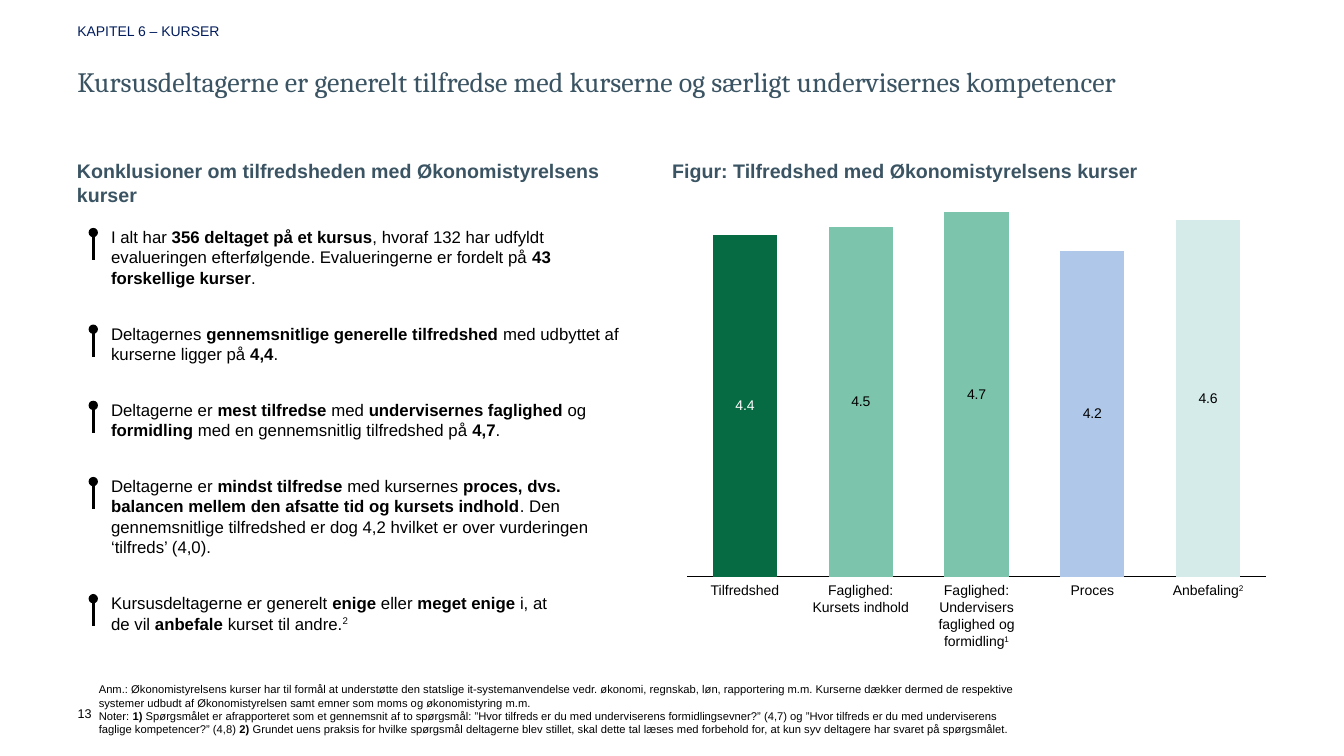
from lxml import etree
from pptx import Presentation
from pptx import util as u
from pptx.chart import data as chart_data
from pptx.dml import color
from pptx.enum import chart as charts, shapes, text
from pptx.oxml import parse_xml
from pptx.oxml import ns

BLACK, SLATE, NAVY = "000000", "3B5463", "031D5C"
LINE_HEIGHT, BULLET_GAP = 0.515, 0.89

CONCLUSIONS = [
    ("I alt har *356 deltaget på et kursus*, hvoraf 132 har udfyldt evalueringen efterfølgende. "
     "Evalueringerne er fordelt på *43 forskellige kurser*.", 3, 13),
    ("Deltagernes *gennemsnitlige generelle tilfredshed *med udbyttet af kurserne ligger på *4,4*.", 2, 13),
    ("Deltagerne er *mest tilfredse *med *undervisernes faglighed *og *formidling* "
     "med en gennemsnitlig tilfredshed på *4,7*.", 2, 13),
    ("Deltagerne er *mindst tilfredse *med kursernes *proces, dvs. balancen mellem den afsatte tid "
     "og kursets indhold*. Den gennemsnitlige tilfredshed er dog 4,2 hvilket er over vurderingen "
     "‘tilfreds’ (4,0).", 4, 12.4),
    ("Kursusdeltagerne er generelt* enige *eller* meget enige *i, at de vil *anbefale *kurset til andre.^2", 2, 11.53),
]

COURSES = [
    ("Tilfredshed", 4.4, "066B43", 1.78, 1),
    ("Faglighed: Kursets indhold", 4.5, "7CC4AC", 2.46, 2),
    ("Faglighed: Undervisers faglighed og formidling^1", 4.7, "7CC4AC", 1.93, 4),
    ("Proces", 4.2, "AFC8E9", 1.12, 1),
    ("Anbefaling^2", 4.6, "D4EBEA", 1.83, 1),
]

NOTES = (
    "Anm.: Økonomistyrelsens kurser har til formål at understøtte den statslige it-systemanvendelse vedr. "
    "økonomi, regnskab, løn, rapportering m.m. Kurserne dækker dermed de respektive systemer udbudt af "
    "Økonomistyrelsen samt emner som moms og økonomistyring m.m.\n"
    "Noter: *1) *Spørgsmålet er afrapporteret som et gennemsnit af to spørgsmål: ”Hvor tilfreds er du med "
    "underviserens formidlingsevner?” (4,7) og ”Hvor tilfreds er du med underviserens faglige kompetencer?” "
    "(4,8)* 2) *Grundet uens praksis for hvilke spørgsmål deltagerne blev stillet, skal dette tal læses med "
    "forbehold for, at kun syv deltagere har svaret på spørgsmålet."
)


def rgb(value):
    return color.RGBColor.from_string(value)


def style_font(font, size, value=BLACK, name="Arial"):
    font.size = u.Pt(size)
    font.name = name
    font.color.rgb = rgb(value)


def clear_margins(frame):
    frame.margin_left = frame.margin_right = frame.margin_top = frame.margin_bottom = 0


def write_rich(paragraph, content):
    for line_number, line in enumerate(content.split("\n")):
        if line_number:
            paragraph.add_line_break()
        for position, chunk in enumerate(line.split("*")):
            body, _, raised = chunk.partition("^")
            if body:
                run = paragraph.add_run()
                run.text = body
                if position % 2:
                    run.font.bold = True
            if raised:
                run = paragraph.add_run()
                run.text = raised
                run.font._element.set("baseline", "30000")


def add_text(slide, box, content, size, value=BLACK, bold=None, align=None, wrap=True):
    shape = slide.shapes.add_textbox(*map(u.Cm, box))
    frame = shape.text_frame
    clear_margins(frame)
    frame.word_wrap = wrap
    paragraph = frame.paragraphs[0]
    write_rich(paragraph, content)
    paragraph.alignment = align
    style_font(paragraph.font, size, value)
    paragraph.font.bold = bold
    return shape


def add_header(slide, left, top, width):
    chapter = add_text(slide, (left, top, 14.99, 0.71), "KAPITEL 6 – KURSER", 10, NAVY)
    chapter.text_frame.vertical_anchor = text.MSO_ANCHOR.MIDDLE
    title = slide.shapes.title
    title.left, title.top, title.width, title.height = map(u.Cm, (left, top + 1.3, width, 2))
    frame = title.text_frame
    frame.text = "Kursusdeltagerne er generelt tilfredse med kurserne og særligt undervisernes kompetencer"
    clear_margins(frame)
    frame.vertical_anchor = text.MSO_ANCHOR.TOP
    paragraph = frame.paragraphs[0]
    paragraph.alignment = text.PP_ALIGN.LEFT
    paragraph.line_spacing = 0.9
    style_font(paragraph.font, 20, SLATE, "Cambria")


def add_pin(slide, left, top):
    pin = slide.shapes.add_connector(
        shapes.MSO_CONNECTOR.STRAIGHT, u.Cm(left), u.Cm(top), u.Cm(left), u.Cm(top + 0.69))
    pin.line.color.rgb = rgb(BLACK)
    pin.line.width = u.Pt(2.25)
    etree.SubElement(pin.line._get_or_add_ln(), ns.qn("a:headEnd"), type="oval")
    etree.SubElement(pin._element.spPr, ns.qn("a:effectLst"))


def add_conclusions(slide, left, top, width):
    add_text(slide, (left, top, width, 1.19),
             "Konklusioner om tilfredsheden med Økonomistyrelsens kurser", 14, SLATE, True)
    bullet_top = top + 1.71
    for content, lines, bullet_width in CONCLUSIONS:
        height = lines * LINE_HEIGHT
        add_text(slide, (left + 0.86, bullet_top, bullet_width, height), content, 12)
        add_pin(slide, left + 0.41, bullet_top + 0.14)
        bullet_top += height + BULLET_GAP


def add_column_chart(slide, box):
    values = chart_data.CategoryChartData(number_format="0.0")
    values.categories = [str(number) for number in range(1, len(COURSES) + 1)]
    values.add_series("Series 1", [course[1] for course in COURSES])
    chart = slide.shapes.add_chart(
        charts.XL_CHART_TYPE.COLUMN_STACKED, *map(u.Cm, box), values).chart
    chart.has_legend = chart.has_title = False
    style_font(chart.font, 10)
    category_axis, value_axis = chart.category_axis, chart.value_axis
    category_axis.tick_label_position = charts.XL_TICK_LABEL_POSITION.NONE
    category_axis.major_tick_mark = charts.XL_TICK_MARK.NONE
    category_axis.format.line.color.rgb = rgb(BLACK)
    category_axis.format.line.width = u.Pt(0.75)
    value_axis.visible = value_axis.has_major_gridlines = False
    value_axis.minimum_scale = 0
    value_axis.maximum_scale = max(course[1] for course in COURSES)
    plot = chart.plots[0]
    plot.gap_width, plot.overlap = 80, 100
    plot.vary_by_categories = False
    plot.has_data_labels = True
    labels = plot.data_labels
    labels.show_value = True
    labels.number_format, labels.number_format_is_linked = "0.0", False
    labels.position = charts.XL_LABEL_POSITION.CENTER
    style_font(labels.font, 10)
    series = plot.series[0]
    series.format.fill.solid()
    series.format.fill.fore_color.rgb = rgb("7CC4AC")
    for index, course in enumerate(COURSES):
        fill = series.points[index].format.fill
        fill.solid()
        fill.fore_color.rgb = rgb(course[2])
        style_font(series.points[index].data_label.font, 10, BLACK if index else "FFFFFF")
    plot_area = chart._chartSpace.chart.plotArea
    for layout in plot_area.findall(ns.qn("c:layout")):
        plot_area.remove(layout)
    plot_area.insert(0, parse_xml(
        f'<c:layout {ns.nsdecls("c")}><c:manualLayout><c:layoutTarget val="inner"/>'
        '<c:xMode val="edge"/><c:yMode val="edge"/><c:x val="0.015"/><c:y val="0.024"/>'
        '<c:w val="0.97"/><c:h val="0.953"/></c:manualLayout></c:layout>'))


def add_figure(slide, left, top, width):
    add_text(slide, (left, top, 11.79, 0.61),
             "Figur: Tilfredshed med Økonomistyrelsens kurser", 14, SLATE, True, wrap=False)
    chart_left = left + 0.15
    add_column_chart(slide, (chart_left, top + 1.1, width, 9.65))
    pitch = width * 0.97 / len(COURSES)
    for index, (name, _, _, label_width, lines) in enumerate(COURSES):
        center = chart_left + width * 0.015 + pitch * (index + 0.5)
        add_text(slide, (center - label_width / 2, top + 10.65, label_width, lines * 0.43),
                 name, 10, align=text.PP_ALIGN.CENTER, wrap=" " in name)


def add_footer(slide, left, top, width):
    add_text(slide, (left, top + 0.58, 0.79, 0.76), "13", 9)
    add_text(slide, (left + 0.53, top, width, 1.37), NOTES, 8)


def main():
    presentation = Presentation()
    presentation.slide_width, presentation.slide_height = u.Cm(33.87), u.Cm(19.05)
    slide = presentation.slides.add_slide(presentation.slide_layouts[5])
    add_header(slide, 1.95, 0.43, 29.97)
    add_conclusions(slide, 1.94, 4.01, 14.2)
    add_figure(slide, 16.94, 4.01, 15.04)
    add_footer(slide, 1.96, 17.2, 23.22)
    presentation.save("out.pptx")


if __name__ == "__main__":
    main()
